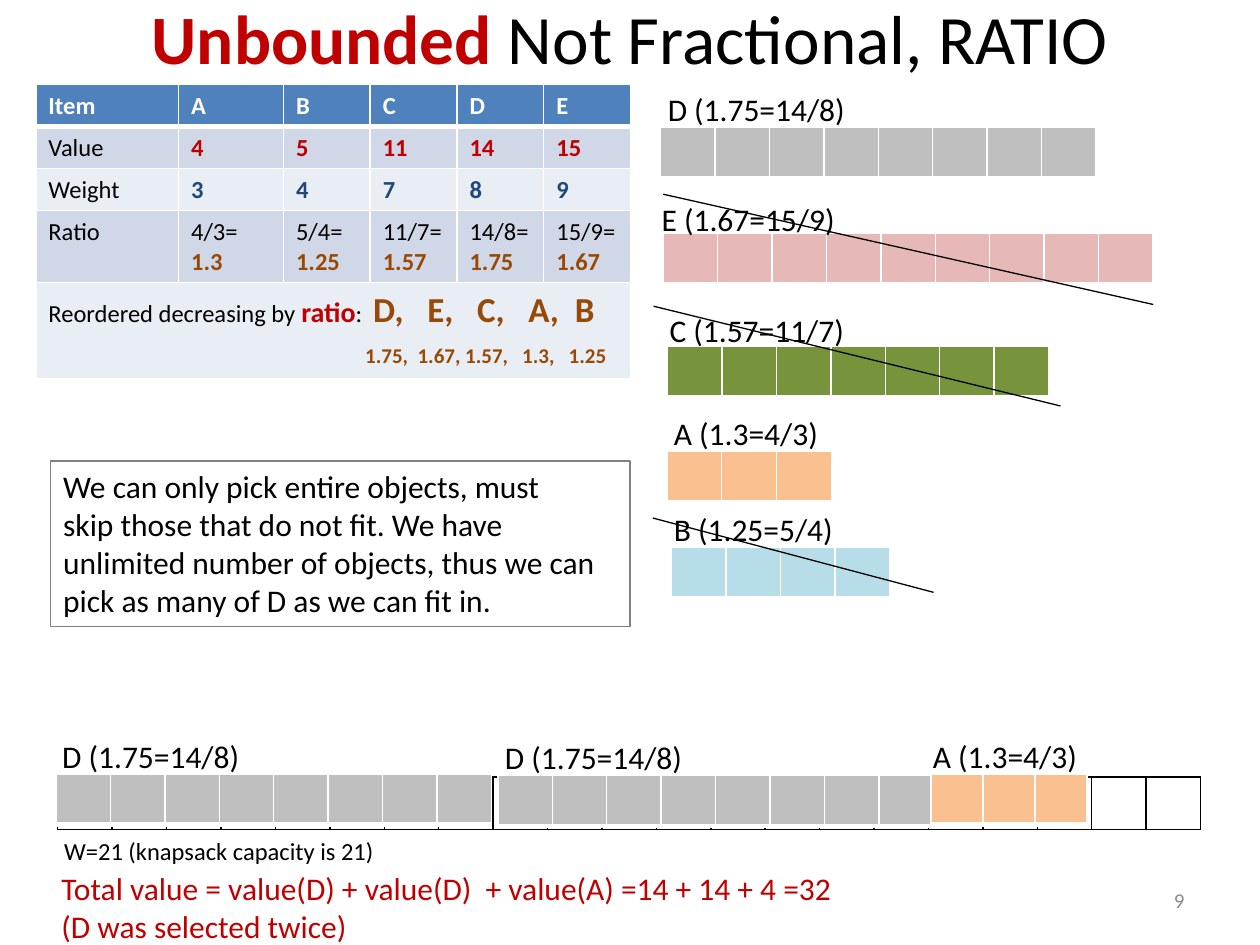
import pptx
import pptx.dml.color
import pptx.enum.shapes
import pptx.enum.text
import pptx.oxml
import pptx.oxml.ns
import pptx.util

Pt = pptx.util.Pt
ALIGN = pptx.enum.text.PP_ALIGN
ANCHOR = pptx.enum.text.MSO_ANCHOR
FIT = pptx.enum.text.MSO_AUTO_SIZE
NS = pptx.oxml.ns.nsdecls("a")
BLACK, WHITE, RED, NAVY, BROWN = "000000", "FFFFFF", "C00000", "1F497D", "984807"
HEADER, BAND, PALE = "4F81BD", "D0D8E8", "E9EDF4"
GREY, ROSE, GREEN, ORANGE, CYAN = "BFBFBF", "E6B9B8", "77933C", "FAC090", "B7DEE8"


def rgb(color):
    return pptx.dml.color.RGBColor.from_string(color)


def set_values(obj, **values):
    for name, value in values.items():
        setattr(obj, name, value)


class Deck:
    font = "Calibri"

    def __init__(self, prs):
        self.slide = prs.slides.add_slide(prs.slide_layouts[5])
        self.shapes = self.slide.shapes

    def fill_text(self, tf, paragraphs, size=18, color=BLACK, bold=False, align=None):
        """Fill tf; a paragraph is a string or a list of (text, overrides) runs."""
        for i, runs in enumerate(paragraphs):
            p = tf.paragraphs[0] if i == 0 else tf.add_paragraph()
            if align is not None:
                p.alignment = align
            if isinstance(runs, str):
                runs = [(runs, {})]
            for text, overrides in runs:
                style = {"size": size, "color": color, "bold": bold, **overrides}
                r = p.add_run()
                r.text = text
                set_values(r.font, name=self.font, size=Pt(style["size"]),
                           bold=style["bold"])
                r.font.color.rgb = rgb(style["color"])

    def title(self, x, y, w, h, runs, size):
        sp = self.shapes.title
        set_values(sp, left=Pt(x), top=Pt(y), width=Pt(w), height=Pt(h))
        set_values(sp.text_frame, auto_size=FIT.NONE, vertical_anchor=ANCHOR.MIDDLE)
        self.fill_text(sp.text_frame, [runs], size, align=ALIGN.CENTER)

    def text(self, x, y, w, h, paragraphs, wrap=False, anchor=ANCHOR.TOP, **style):
        tf = self.shapes.add_textbox(Pt(x), Pt(y), Pt(w), Pt(h)).text_frame
        set_values(tf, word_wrap=wrap, vertical_anchor=anchor)
        self.fill_text(tf, paragraphs, **style)

    def box(self, x, y, w, h, paragraphs, line):
        sp = self.shapes.add_shape(
            pptx.enum.shapes.MSO_SHAPE.RECTANGLE, Pt(x), Pt(y), Pt(w), Pt(h))
        sp.shadow.inherit = False
        sp.fill.background()
        sp.line.color.rgb = rgb(line)
        sp.line.width = Pt(0.75)
        set_values(sp.text_frame, word_wrap=True, vertical_anchor=ANCHOR.TOP)
        self.fill_text(sp.text_frame, paragraphs, align=ALIGN.LEFT)

    def line(self, x1, y1, x2, y2):
        cn = self.shapes.add_connector(
            pptx.enum.shapes.MSO_CONNECTOR.STRAIGHT, Pt(x1), Pt(y1), Pt(x2), Pt(y2))
        cn.line.color.rgb = rgb(BLACK)
        cn.line.width = Pt(0.75)
        cn._element.spPr.append(pptx.oxml.parse_xml(f"<a:effectLst {NS}/>"))

    def table(self, x, y, w, h, rows, cols):
        table = self.shapes.add_table(rows, cols, Pt(x), Pt(y), Pt(w), Pt(h)).table
        set_values(table, first_row=False, horz_banding=False)
        return table

    def cell(self, cell, fill=None, border=WHITE, top=1, bottom=1):
        tcPr = cell._tc.get_or_add_tcPr()
        for side, width in (("L", 1), ("R", 1), ("T", top), ("B", bottom)):
            tcPr.append(pptx.oxml.parse_xml(
                f'<a:ln{side} {NS} w="{Pt(width)}"><a:solidFill>'
                f'<a:srgbClr val="{border}"/></a:solidFill></a:ln{side}>'))
        if fill:
            cell.fill.solid()
            cell.fill.fore_color.rgb = rgb(fill)
        else:
            cell.fill.background()

    def bar(self, x, y, units, fill=None, unit=31.1, h=29, **borders):
        """One cell per unit of weight."""
        table = self.table(x, y, unit * units, h, 1, units)
        for cell in table.iter_cells():
            self.cell(cell, fill, **borders)


def item_table(deck):
    items = "ABCDE"
    values, weights = (4, 5, 11, 14, 15), (3, 4, 7, 8, 9)
    ratios = ("1.3", "1.25", "1.57", "1.75", "1.67")
    brown = {"color": BROWN, "bold": True}
    fractions = [[f"{v}/{w}=", [(ratio, brown)]]
                 for v, w, ratio in zip(values, weights, ratios)]
    rows = [
        ("Item", [[i] for i in items], HEADER, {"color": WHITE, "bold": True}),
        ("Value", [[str(v)] for v in values], BAND, {"color": RED, "bold": True}),
        ("Weight", [[str(w)] for w in weights], PALE, {"color": NAVY, "bold": True}),
        ("Ratio", fractions, BAND, {}),
    ]
    table = deck.table(20.5, 48.3, 340, 168, len(rows) + 1, len(items) + 1)
    for col, width in zip(table.columns, (81.5, 60) + (49.6,) * 4):
        col.width = Pt(width)
    for row, height in zip(table.rows, (24, 24, 24, 41, 55)):
        row.height = Pt(height)

    for i, (label, entries, fill, style) in enumerate(rows):
        label_style = style if i == 0 else {}
        for j, paragraphs in enumerate([[label]] + entries):
            cell = table.cell(i, j)
            deck.cell(cell, fill, top=3 if i == 1 else 1, bottom=3 if i == 0 else 1)
            deck.fill_text(cell.text_frame, paragraphs, size=14,
                           **(style if j else label_style))

    last = len(rows)
    for j in range(len(items) + 1):
        deck.cell(table.cell(last, j), PALE)
    order = table.cell(last, 0)
    order.merge(table.cell(last, len(items)))
    deck.fill_text(order.text_frame, [
        [("Reordered decreasing by ", {}),
         ("ratio", {"size": 16, "color": RED, "bold": True}),
         (":  ", {}),
         ("D,   E,   C,   A,  B", {"size": 20, **brown})],
        [("1.75,  1.67, 1.57,   1.3,   1.25", {"size": 12, **brown})],
    ], size=14)
    ratio_line = order.text_frame.paragraphs[1]
    ratio_line.space_before = Pt(7)
    ratio_line._p.get_or_add_pPr().set("marL", str(Pt(181)))


def main():
    prs = pptx.Presentation()
    set_values(prs, slide_width=Pt(720), slide_height=Pt(540))
    deck = Deck(prs)
    deck.title(36, 2, 648, 37.5, [("Unbounded", {"color": RED, "bold": True}),
                                  (" Not Fractional, RATIO", {})], size=39.6)
    deck.bar(33, 444, 21, h=30, border=BLACK)
    deck.text(516, 500, 168, 29, ["9"], wrap=True, anchor=ANCHOR.MIDDLE,
              size=12, color="8C8C8C", align=ALIGN.RIGHT)
    deck.text(29.5, 474, 193, 24, ["W=21 (knapsack capacity is 21)"], size=14)
    item_table(deck)
    deck.text(28, 493, 461, 51, [
        "Total value = value(D) + value(D)  + value(A) =14 + 14 + 4 =32",
        "(D was selected twice)"], color=RED)

    d, e, c = "D (1.75=14/8)", "E (1.67=15/9)", "C (1.57=11/7)"
    a, b = "A (1.3=4/3)", "B (1.25=5/4)"
    # bar x, y, weight, fill, unit width, label, label x, y, width
    bars = [
        (32, 442.3, 8, GREY, 31.1, d, 28.5, 417.6, 117),
        (284.5, 443, 8, GREY, 31.1, d, 281.5, 418.3, 117),
        (532, 442.3, 3, ORANGE, 29.7, a, 526, 417.6, 98),
        (377.5, 72.7, 8, GREY, 31.1, d, 374.5, 48, 117),
        (379, 133.3, 9, ROSE, 31.1, e, 371, 111, 114),
        (381.5, 198, 7, GREEN, 31.1, c, 375.5, 174, 115),
        (381, 258, 3, ORANGE, 31.4, a, 378, 233, 98),
        (383.8, 312.7, 4, CYAN, 31.1, b, 378, 288, 107),
    ]
    for x, y, weight, fill, unit, label, label_x, label_y, label_w in bars:
        deck.bar(x, y, weight, fill, unit, bottom=3)
        deck.text(label_x, label_y, label_w, 29, [label])

    for ends in ((379, 111, 659, 174), (373.5, 175, 606, 232), (373, 296, 533.5, 338.5)):
        deck.line(*ends)
    deck.box(29, 263.5, 331, 94.5, [
        "We can only pick entire objects, must",
        "skip those that do not fit. We have unlimited number of objects, "
        "thus we can pick as many of D as we can fit in."], line="808080")
    prs.save("out.pptx")


if __name__ == "__main__":
    main()
